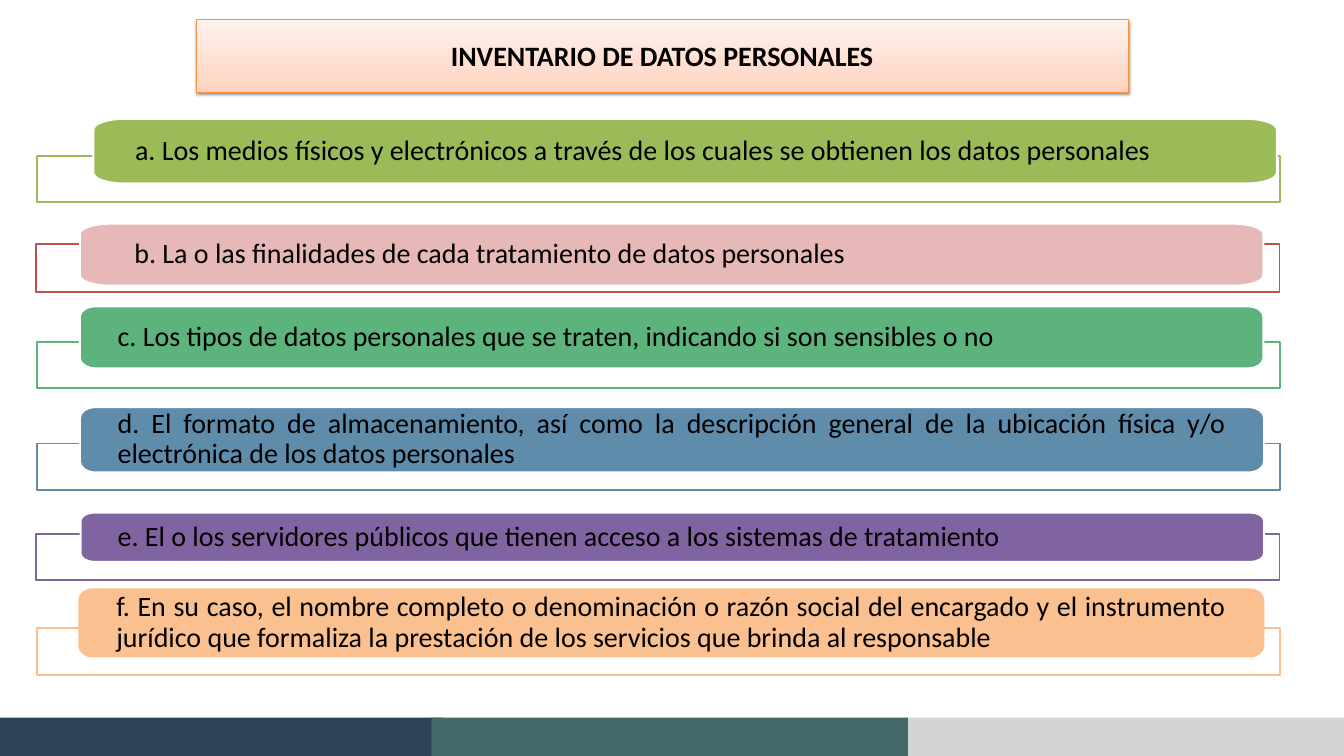
from lxml.etree import SubElement
from pptx import Presentation
from pptx.dml.color import RGBColor
from pptx.enum.shapes import MSO_SHAPE
from pptx.enum.text import MSO_ANCHOR, PP_ALIGN
from pptx.oxml import parse_xml
from pptx.oxml.ns import nsdecls, qn
from pptx.util import Inches, Pt

COLORS = {
    "white": "FFFFFF", "black": "000000",
    "green": "9BBB59", "red": "C0504D", "pink": "E6B9B8", "mint": "5CB37C",
    "blue": "608CAB", "purple": "8064A2", "orange": "FAC090",
    "title_line": "F69240",
    "title_low": "FFD2BD", "title_mid": "FFDED0", "title_high": "FFF2ED",
    "navy": "2C4359", "teal": "446969", "gray": "D3D4D6",
}
TEXT_FORMAT = {"name": "Calibri", "size": Pt(30), "bold": False}
LEFT, JUSTIFY = PP_ALIGN.LEFT, PP_ALIGN.JUSTIFY
CURVE = 0.55  # handle length of a quarter ellipse, as a share of its radius

# text, frame color, bar color, bar line, frame box, bar box, corner radii, insets, alignment
ITEMS = [
    ("a. Los medios físicos y electrónicos a través de los cuales se obtienen los datos personales",
     "green", "green", "white", (0.55, 2.32, 18.5, 0.69), (1.39, 1.77, 17.61, 0.96),
     (0.45, 0.16), (0.62, 0.13), LEFT),
    ("c. Los tipos de datos personales que se traten, indicando si son sensibles o no",
     "mint", "mint", "white", (0.55, 5.09, 18.5, 0.69), (1.19, 4.56, 17.61, 0.92),
     (0.23, 0.15), (0.56, 0.07), LEFT),
    ("d. El formato de almacenamiento, así como la descripción general de la ubicación "
     "física y/o electrónica de los datos personales",
     "blue", "blue", "white", (0.55, 6.6, 18.5, 0.69), (1.19, 6.06, 17.62, 0.97),
     (0.23, 0.16), (0.56, 0.07), JUSTIFY),
    ("e. El o los servidores públicos que tienen acceso a los sistemas de tratamiento",
     "purple", "purple", "white", (0.54, 7.94, 18.5, 0.69), (1.2, 7.63, 17.61, 0.73),
     (0.2, 0.12), (0.55, 0.06), LEFT),
    ("b. La o las finalidades de cada tratamiento de datos personales",
     "red", "pink", "white", (0.54, 3.63, 18.5, 0.72), (1.19, 3.33, 17.61, 0.92),
     (0.45, 0.15), (0.81, 0.13), LEFT),
    ("f. En su caso, el nombre completo o denominación o razón social del encargado y el "
     "instrumento jurídico que formaliza la prestación de los servicios que brinda al responsable",
     "orange", "orange", "orange", (0.55, 9.35, 18.5, 0.69), (1.18, 8.77, 17.62, 1),
     (0.2, 0.16), (0.55, 0.06), JUSTIFY),
]


def rgb(name):
    return RGBColor.from_string(COLORS[name])


def paint(shape, fill, line=None, width=2):
    shape.shadow.inherit = False
    shape.fill.solid()
    shape.fill.fore_color.rgb = rgb(fill)
    if line:
        shape.line.color.rgb = rgb(line)
        shape.line.width = Pt(width)
    else:
        shape.line.fill.background()


def add_rectangle(page, box, fill, line=None, width=2):
    shape = page.shapes.add_shape(MSO_SHAPE.RECTANGLE, *map(Inches, box))
    paint(shape, fill, line, width)
    return shape


def write(shape, text, align, insets=(0.1, 0.05), spacing=1.0, **changes):
    frame = shape.text_frame
    frame.word_wrap = True
    frame.vertical_anchor = MSO_ANCHOR.MIDDLE
    frame.margin_left = frame.margin_right = Inches(insets[0])
    frame.margin_top = frame.margin_bottom = Inches(insets[1])
    para = frame.paragraphs[0]
    para.alignment = align
    para.line_spacing = spacing
    span = para.add_run()
    span.text = text
    for key, value in {**TEXT_FORMAT, **changes}.items():
        setattr(span.font, key, value)
    span.font.color.rgb = rgb("black")


def add_rounded_bar(page, box, radii, fill, line):
    """Bar whose corners are quarter ellipses, so both radii can differ."""
    left, top, width, height = map(Inches, box)
    rx, ry = map(Inches, radii)
    # Each corner: where its curve starts, its tip, where its curve ends
    corners = [
        ((0, ry), (0, 0), (rx, 0)),
        ((width - rx, 0), (width, 0), (width, ry)),
        ((width, height - ry), (width, height), (width - rx, height)),
        ((rx, height), (0, height), (0, height - ry)),
    ]
    points = [(left + x, top + y) for start, _, end in corners for x, y in (start, end)]
    builder = page.shapes.build_freeform(*points[0])
    builder.add_line_segments(points[1:], close=True)
    bar = builder.convert_to_shape()
    paint(bar, fill, line)
    # Every other segment is a corner: turn it into a curve
    segments = list(bar.fill._xPr.iter(qn("a:lnTo")))[::2]
    for segment, (start, tip, end) in zip(segments, corners):
        handles = [tuple(round(a + (b - a) * CURVE) for a, b in zip(anchor, tip))
                   for anchor in (start, end)]
        marks = "".join(f'<a:pt x="{x}" y="{y}"/>' for x, y in (*handles, end))
        curve = parse_xml(f'<a:cubicBezTo {nsdecls("a")}>{marks}</a:cubicBezTo>')
        segment.getparent().replace(segment, curve)
    return bar


def add_item(page, text, frame_color, bar_color, bar_line, frame_box, bar_box, radii, insets, align):
    panel = add_rectangle(page, frame_box, "white", frame_color)
    # Panel is slightly see-through
    color = panel.fill._xPr.find(qn("a:solidFill"))[0]
    SubElement(color, qn("a:alpha")).set("val", "90000")
    bar = add_rounded_bar(page, bar_box, radii, bar_color, bar_line)
    write(bar, text, align, insets, spacing=0.9)


def add_title(page, box):
    title = add_rectangle(page, box, "white", "title_line", 0.75)
    properties = title.fill._xPr
    # Three-stop gradient, running from the bottom up
    stops = "".join(
        f'<a:gs pos="{position * 1000}"><a:srgbClr val="{COLORS[name]}"/></a:gs>'
        for position, name in ((0, "title_low"), (35, "title_mid"), (100, "title_high")))
    gradient = parse_xml(
        f'<a:gradFill {nsdecls("a")} rotWithShape="1"><a:gsLst>{stops}</a:gsLst>'
        '<a:lin ang="16200000" scaled="1"/></a:gradFill>')
    properties.replace(properties.find(qn("a:solidFill")), gradient)
    # Soft shadow below
    shadow = parse_xml(
        f'<a:outerShdw {nsdecls("a")} blurRad="{Pt(3.1)}" dist="{Pt(1.6)}" dir="5400000" '
        f'rotWithShape="0"><a:srgbClr val="{COLORS["black"]}"><a:alpha val="38000"/>'
        '</a:srgbClr></a:outerShdw>')
    properties.find(qn("a:effectLst")).append(shadow)
    write(title, "INVENTARIO DE DATOS PERSONALES", PP_ALIGN.CENTER, bold=True)


def add_footer(page, box):
    left, top, width, height = box
    side = 6.59
    add_rectangle(page, (left, top, side, height), "navy")
    add_rectangle(page, (left + width - side, top, side, height), "gray")
    add_rectangle(page, (left + 6.42, top, 7.09, height), "teal")


def main():
    deck = Presentation()
    deck.slide_width, deck.slide_height = Inches(20), Inches(11.25)
    page = deck.slides.add_slide(deck.slide_layouts[6])
    add_footer(page, (0, 10.68, 20, 0.57))
    for item in ITEMS[:4]:
        add_item(page, *item)
    add_title(page, (2.92, 0.29, 13.87, 1.08))
    for item in ITEMS[4:]:
        add_item(page, *item)
    deck.save("out.pptx")


if __name__ == "__main__":
    main()
